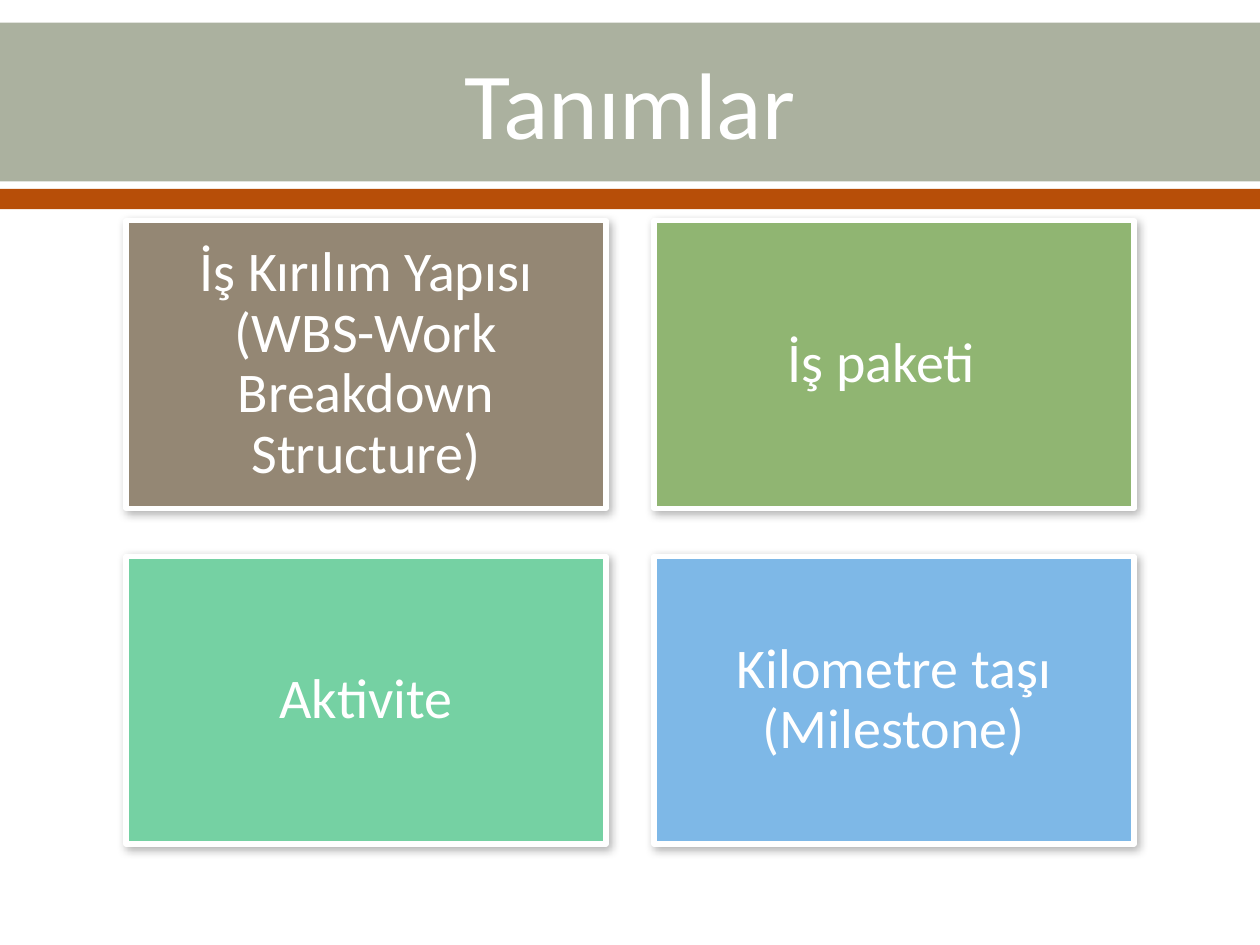
from lxml import etree
from pptx import Presentation
from pptx.dml.color import RGBColor
from pptx.enum.shapes import MSO_SHAPE
from pptx.enum.text import MSO_ANCHOR, PP_ALIGN
from pptx.oxml.ns import qn
from pptx.util import Inches, Pt

RECTANGLE = MSO_SHAPE.RECTANGLE
CENTER = PP_ALIGN.CENTER
MIDDLE = MSO_ANCHOR.MIDDLE

FONT = "Calibri"
WHITE = "FFFFFF"
BAND = "ABB19F"
STRIPE = "B74E08"

CARD_INSET = 0.13
# Text, fill and extra right inset of each card, row by row
CARDS = [
    ("İş Kırılım Yapısı (WBS-Work Breakdown Structure)", "948774", 0),
    ("İş paketi", "90B572", 0.2),
    ("Aktivite", "75D1A3", 0),
    ("Kilometre taşı (Milestone)", "7EB8E7", 0),
]


def color(hex_code):
    return RGBColor.from_string(hex_code)


def add_rectangle(slide, box, fill, line=None, line_width=3):
    rectangle = slide.shapes.add_shape(RECTANGLE, *map(Inches, box))
    rectangle.shadow.inherit = False
    rectangle.fill.solid()
    rectangle.fill.fore_color.rgb = color(fill)
    if line:
        rectangle.line.color.rgb = color(line)
        rectangle.line.width = Pt(line_width)
    else:
        rectangle.line.fill.background()
    return rectangle


def add_shadow(shape, blur=5, distance=2, angle=60, opacity=30):
    """Blur and distance are points, angle is degrees, opacity is percent."""
    effects = shape._element.spPr.find(qn("a:effectLst"))
    shadow = etree.SubElement(
        effects, qn("a:outerShdw"), blurRad=str(Pt(blur)), dist=str(Pt(distance)),
        dir=str(angle * 60000), algn="tl", rotWithShape="0")
    shade = etree.SubElement(shadow, qn("a:srgbClr"), val="000000")
    etree.SubElement(shade, qn("a:alpha"), val=str(opacity * 1000))


def write_text(frame, text, size, insets=(0.1, 0.05, 0.1, 0.05), spacing=1.0):
    """Insets are left, top, right and bottom in inches."""
    frame.word_wrap = True
    frame.vertical_anchor = MIDDLE
    (frame.margin_left, frame.margin_top,
     frame.margin_right, frame.margin_bottom) = map(Inches, insets)
    paragraph = frame.paragraphs[0]
    paragraph.alignment = CENTER
    paragraph.line_spacing = spacing
    run = paragraph.add_run()
    run.text = text
    run.font.name = FONT
    run.font.size = Pt(size)
    run.font.color.rgb = color(WHITE)


def add_header(slide, left, top, width, height):
    """Title band over a thin stripe that ends at the bottom of the box."""
    stripe_height, gap = 0.16, 0.06
    band_height = height - stripe_height - gap
    add_rectangle(slide, (left, top, width, band_height), BAND)
    add_rectangle(
        slide, (left, top + height - stripe_height, width, stripe_height), STRIPE)
    title = slide.shapes.add_textbox(
        *map(Inches, (left + 0.5, top + 0.02, width - 1, band_height - 0.04)))
    write_text(title.text_frame, "Tanımlar", size=54)


def add_card_grid(slide, left, top, width, height, columns=2, gap=0.38):
    rows = len(CARDS) // columns
    card_width = (width - gap * (columns - 1)) / columns
    card_height = (height - gap * (rows - 1)) / rows
    for index, (text, fill, extra_right) in enumerate(CARDS):
        row, column = divmod(index, columns)
        box = (left + column * (card_width + gap),
               top + row * (card_height + gap), card_width, card_height)
        card = add_rectangle(slide, box, fill, line=WHITE)
        add_shadow(card)
        insets = (CARD_INSET, CARD_INSET, CARD_INSET + extra_right, CARD_INSET)
        write_text(card.text_frame, text, size=32, insets=insets, spacing=0.9)


def main():
    presentation = Presentation()
    presentation.slide_width = Inches(10)
    presentation.slide_height = Inches(7.5)
    slide = presentation.slides.add_slide(presentation.slide_layouts[6])
    add_header(slide, 0, 0.18, 10, 1.48)
    add_card_grid(slide, 1, 1.75, 8, 4.95)
    presentation.save("out.pptx")


if __name__ == "__main__":
    main()
